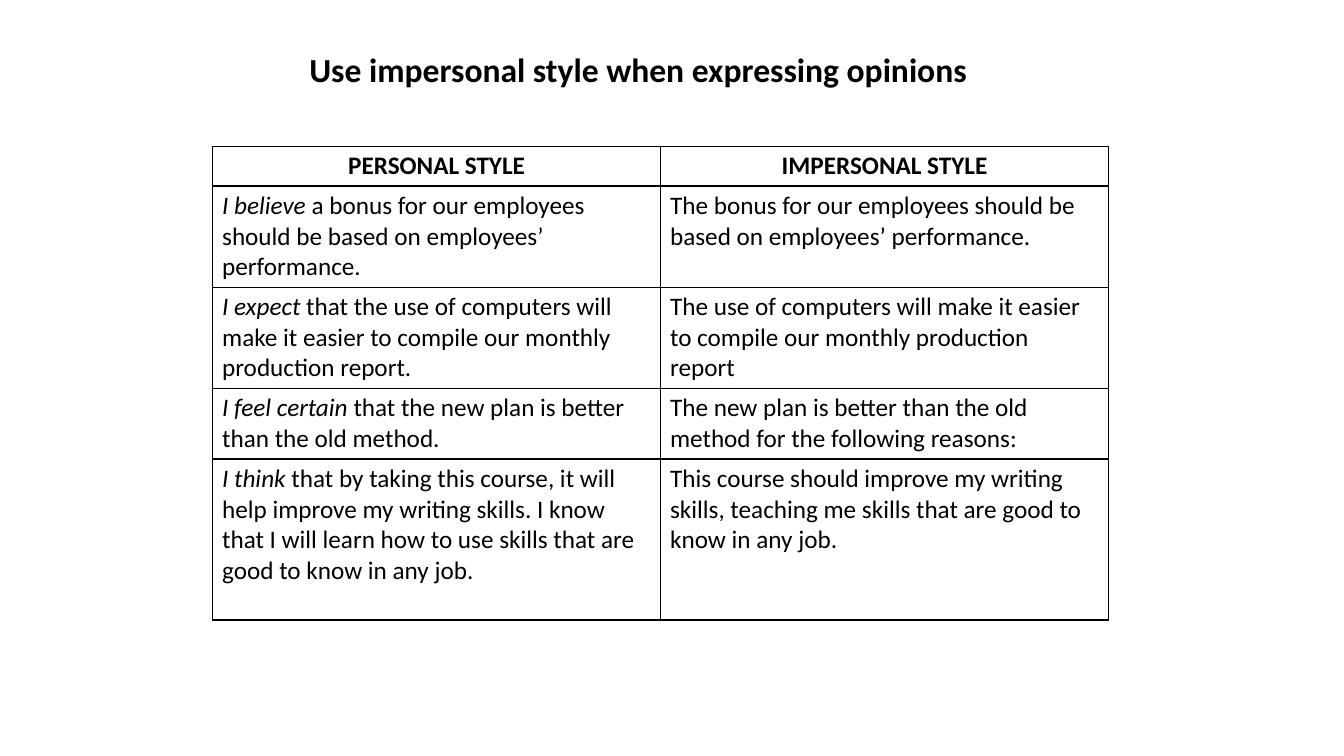
import pptx
import pptx.util
import pptx.dml.color
import pptx.enum.text
import pptx.oxml
import pptx.oxml.ns

Pt = pptx.util.Pt
RGB = pptx.dml.color.RGBColor.from_string
ALIGN = pptx.enum.text.PP_ALIGN

TITLE = "Use impersonal style when expressing opinions"
HEADINGS = ["PERSONAL STYLE", "IMPERSONAL STYLE"]
# Each example: italic opening, rest of the personal wording, impersonal wording
EXAMPLES = [
    ("I believe ",
     ["a bonus for our employees should be based on employees’ performance."],
     ["The bonus for our employees should be based on employees’ performance."]),
    ("I expect ",
     ["that the use of computers will make it easier to compile our monthly production report."],
     ["The use of computers will make it easier to compile our monthly production report"]),
    ("I feel certain ",
     ["that the new plan is better than the old method."],
     ["The new plan is better than the old", "method for the following reasons:"]),
    ("I think ",
     ["that by taking this course, it will help improve my writing skills. "
      "I know that I will learn how to use skills that are",
      "good to know in any job."],
     ["This course should improve my writing",
      "skills, teaching me skills that are good to",
      "know in any job."]),
]

THEME = {"font": "Calibri", "ink": "000000", "title": 24, "body": 18, "border": 1}
SLIDE = (960, 540)
TITLE_BOX = (213.84, 31.68, 547.92, 36)
TABLE_AT = (151.92, 104.6)
COLUMN_WIDTH = 320
ROW_HEIGHTS = [28.3, 72.2, 72.2, 50.6, 115]
MARGINS = {"margin_left": 6.8, "margin_right": 6.8, "margin_top": 3.1, "margin_bottom": 3.1}


def add_run(p, text, size, bold=False, italic=False):
    r = p.add_run()
    r.text = text
    formats = {"name": THEME["font"], "size": Pt(size), "bold": bold, "italic": italic}
    for name, value in formats.items():
        setattr(r.font, name, value)
    r.font.color.rgb = RGB(THEME["ink"])


def set_borders(cell):
    tcPr = cell._tc.get_or_add_tcPr()
    ns = pptx.oxml.ns.nsdecls("a")
    for i, side in enumerate(("lnL", "lnR", "lnT", "lnB")):
        tcPr.insert(i, pptx.oxml.parse_xml(
            f'<a:{side} {ns} w="{Pt(THEME["border"])}"><a:solidFill>'
            f'<a:srgbClr val="{THEME["ink"]}"/></a:solidFill></a:{side}>'))


def fill_cell(cell, lines, opening="", heading=False):
    for name, value in MARGINS.items():
        setattr(cell, name, Pt(value))
    cell.fill.background()
    set_borders(cell)
    tf = cell.text_frame
    for i, line in enumerate(lines):
        p = tf.add_paragraph() if i else tf.paragraphs[0]
        p.alignment = ALIGN.CENTER if heading else ALIGN.LEFT
        if opening and i == 0:
            add_run(p, opening, THEME["body"], italic=True)
        add_run(p, line, THEME["body"], bold=heading)


def add_title(s):
    tf = s.shapes.add_textbox(*map(Pt, TITLE_BOX)).text_frame
    tf.word_wrap = True
    add_run(tf.paragraphs[0], TITLE, THEME["title"], bold=True)


def add_style_table(s):
    size = (COLUMN_WIDTH * len(HEADINGS), sum(ROW_HEIGHTS))
    table = s.shapes.add_table(len(ROW_HEIGHTS), len(HEADINGS),
                               *map(Pt, TABLE_AT + size)).table
    for flag in ("first_row", "horz_banding"):
        setattr(table, flag, False)
    for column in table.columns:
        column.width = Pt(COLUMN_WIDTH)
    for row, height in zip(table.rows, ROW_HEIGHTS):
        row.height = Pt(height)
    for c, heading in enumerate(HEADINGS):
        fill_cell(table.cell(0, c), [heading], heading=True)
    for r, (opening, personal, impersonal) in enumerate(EXAMPLES, start=1):
        fill_cell(table.cell(r, 0), personal, opening)
        fill_cell(table.cell(r, 1), impersonal)


def main():
    prs = pptx.Presentation()
    prs.slide_width, prs.slide_height = map(Pt, SLIDE)
    s = prs.slides.add_slide(prs.slide_layouts[6])
    add_title(s)
    add_style_table(s)
    prs.save("out.pptx")


if __name__ == "__main__":
    main()
